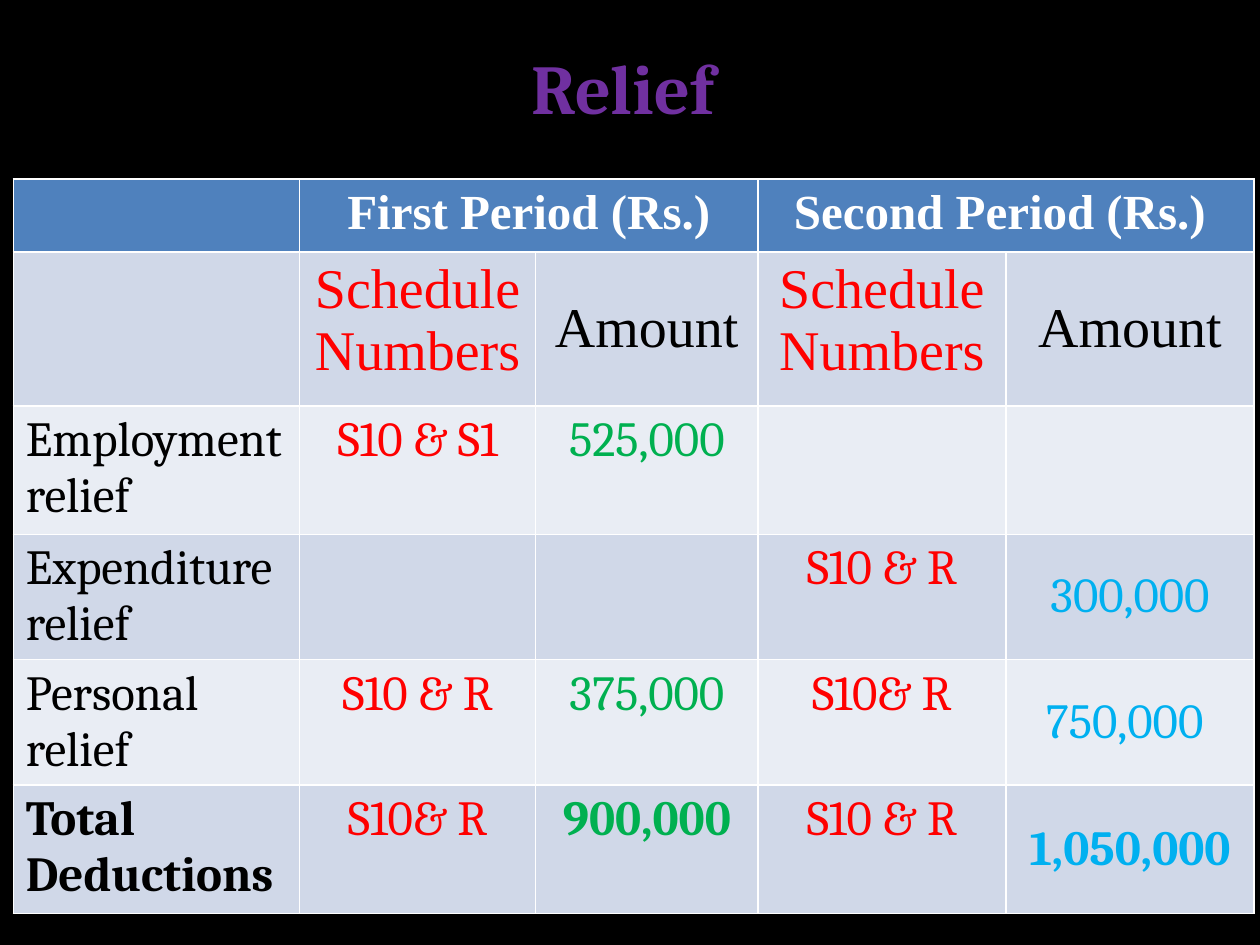
from dataclasses import dataclass

from pptx import Presentation
from pptx.dml.color import RGBColor
from pptx.enum.text import MSO_ANCHOR, PP_ALIGN
from pptx.util import Cm, Pt

CENTER, LEFT = PP_ALIGN.CENTER, PP_ALIGN.LEFT
TOP, MIDDLE = MSO_ANCHOR.TOP, MSO_ANCHOR.MIDDLE
TITLE_ONLY = 5


@dataclass(frozen=True)
class Theme:
    background: str = "000000"
    title: str = "7030A0"
    header_fill: str = "4F81BD"
    header_text: str = "FFFFFF"
    dark_band: str = "D0D8E8"
    light_band: str = "E9EDF4"
    label: str = "000000"
    schedule: str = "FF0000"
    first_amount: str = "00B050"
    second_amount: str = "00B0F0"
    heading_font: str = "Times New Roman"
    body_font: str = "Cambria"
    title_size: int = 40
    subheading_size: int = 32
    body_size: int = 28


class SlideBuilder:
    def __init__(self, page, theme):
        self.page = page
        self.theme = theme

    def background(self):
        fill = self.page.background.fill
        fill.solid()
        fill.fore_color.rgb = RGBColor.from_string(self.theme.background)

    def add_text(self, frame, text, color, size, font, bold=False, align=CENTER):
        para = frame.paragraphs[0]
        para.alignment = align
        span = para.add_run()
        span.text = text
        span.font.name = font
        span.font.size = Pt(size)
        span.font.bold = bold
        span.font.color.rgb = RGBColor.from_string(color)

    def title(self, text, left, top, width, height):
        box = self.page.shapes.title
        box.left, box.top, box.width, box.height = map(Cm, (left, top, width, height))
        box.text_frame.vertical_anchor = MIDDLE
        self.add_text(box.text_frame, text, self.theme.title, self.theme.title_size,
                      self.theme.body_font, bold=True)

    def table(self, left, top, widths, heights):
        """Add an empty table with a filled header row and banded body rows."""
        table = self.page.shapes.add_table(
            len(heights), len(widths), Cm(left), Cm(top),
            Cm(sum(widths)), Cm(sum(heights))).table
        for column, width in zip(table.columns, widths):
            column.width = Cm(width)
        bands = (self.theme.light_band, self.theme.dark_band)
        for index, (row, height) in enumerate(zip(table.rows, heights)):
            row.height = Cm(height)
            color = bands[index % 2] if index else self.theme.header_fill
            for cell in row.cells:
                cell.fill.solid()
                cell.fill.fore_color.rgb = RGBColor.from_string(color)
        return table

    def cell(self, cell, text, anchor=TOP, **style):
        if text:
            cell.vertical_anchor = anchor
            self.add_text(cell.text_frame, text, **style)

    def period_headers(self, table, names):
        """Put each period over a merged pair of columns."""
        for column, name in zip((1, 3), names):
            header = table.cell(0, column)
            header.merge(table.cell(0, column + 1))
            self.cell(header, name, color=self.theme.header_text, bold=True,
                      size=self.theme.body_size, font=self.theme.heading_font)

    def subheadings(self, table):
        theme = self.theme
        for column in (1, 3):
            for offset, text, color, anchor in (
                    (0, "Schedule Numbers", theme.schedule, TOP),
                    (1, "Amount", theme.label, MIDDLE)):
                self.cell(table.cell(1, column + offset), text, anchor, color=color,
                          size=theme.subheading_size, font=theme.heading_font)

    def relief_row(self, table, row, texts, total=False):
        """Fill in a label and two schedule/amount pairs; a total row has bold figures."""
        theme = self.theme
        colors = (theme.label, theme.schedule, theme.first_amount,
                  theme.schedule, theme.second_amount)
        for column, (text, color) in enumerate(zip(texts, colors)):
            self.cell(table.cell(row, column), text,
                      MIDDLE if column == 4 else TOP, color=color,
                      size=theme.body_size, font=theme.body_font,
                      bold=total and color != theme.schedule,
                      align=CENTER if column else LEFT)


RELIEFS = [
    ("Employment relief", "S10 & S1", "525,000", "", ""),
    ("Expenditure relief", "", "", "S10 & R", "300,000"),
    ("Personal relief", "S10 & R", "375,000", "S10& R", "750,000 "),
    ("Total Deductions", "S10& R", "900,000", "S10 & R", "1,050,000"),
]


def main():
    deck = Presentation()
    deck.slide_width, deck.slide_height = Cm(25.4), Cm(19.05)
    page = deck.slides.add_slide(deck.slide_layouts[TITLE_ONLY])
    builder = SlideBuilder(page, Theme())
    builder.background()
    table = builder.table(0.27, 3.61, widths=(5.77, 4.76, 4.48, 5, 5),
                          heights=(1.47, 3.1, 2.59, 2.53, 2.53, 2.59))
    builder.period_headers(table, ("First Period (Rs.)", "Second Period (Rs.) "))
    builder.subheadings(table)
    for row, texts in enumerate(RELIEFS, start=2):
        builder.relief_row(table, row, texts, total=texts is RELIEFS[-1])
    builder.title("Relief", 1.27, 0.76, 22.56, 1.96)
    deck.save("out.pptx")


if __name__ == "__main__":
    main()
